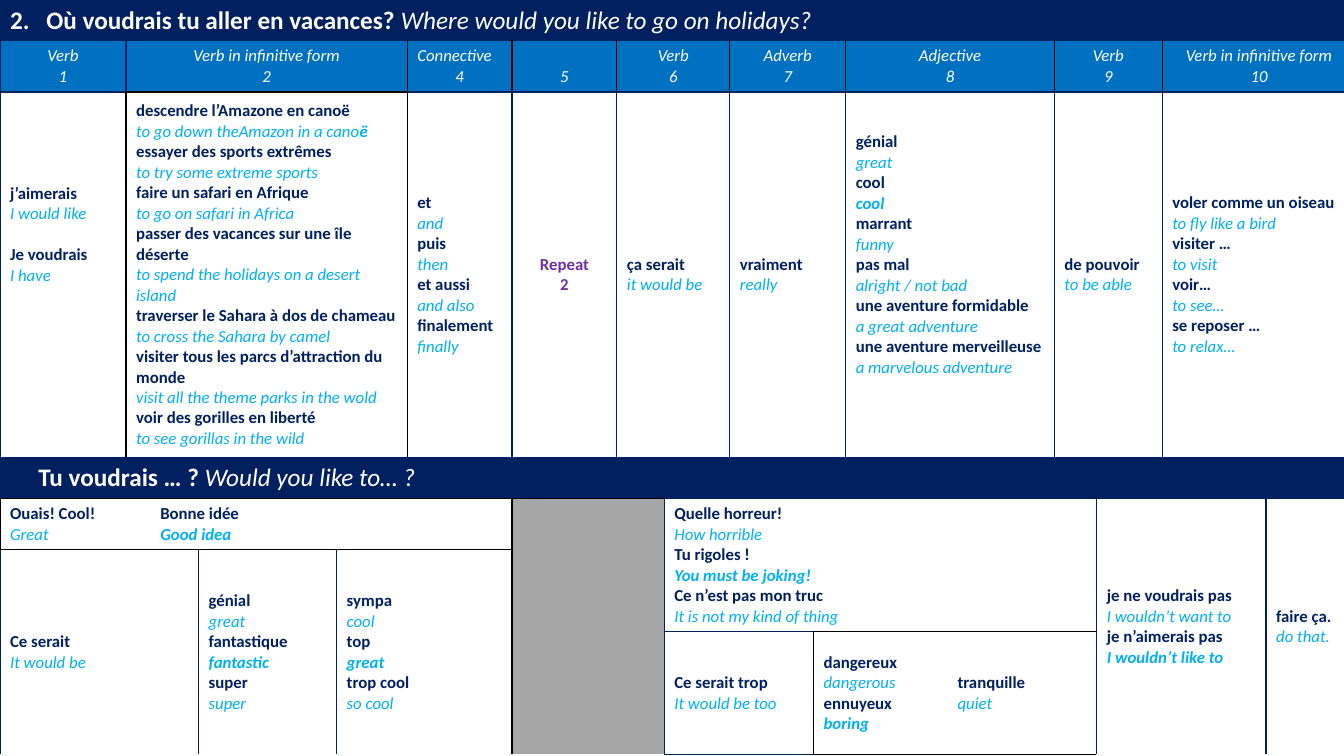
from typing import NamedTuple

from lxml import etree
from pptx import Presentation
from pptx import util as u
from pptx.dml.color import RGBColor
from pptx.enum import text as t
from pptx.oxml import ns

NAVY = RGBColor(0x00, 0x20, 0x60)
BLUE = RGBColor(0x00, 0x70, 0xC0)
SKY = RGBColor(0x00, 0xB0, 0xF0)
PLUM = RGBColor(0x70, 0x30, 0xA0)
GREY = RGBColor(0xA6, 0xA6, 0xA6)
WHITE = RGBColor(0xFF, 0xFF, 0xFF)
BLACK = RGBColor(0x00, 0x00, 0x00)

WIDTHS = [1.25, 0.13, 0.48, 1.37, 0.7, 1.04, 1.04, 0.47, 0.65,
          0.83, 0.32, 1.01, 1.06, 0.42, 0.65, 1.03, 0.89]
HEIGHTS = [0.39, 0.49, 3.63, 0.39, 0.49, 0.78, 1.22]
INKS = {"n": NAVY, "k": BLACK}
LEFT, MID = t.PP_ALIGN.LEFT, t.PP_ALIGN.CENTER


class Span(NamedTuple):
    text: str
    ink: RGBColor
    bold: bool = False
    slant: bool = False
    size: int = 12


class Line(NamedTuple):
    spans: list[Span]
    align: t.PP_ALIGN = LEFT


class Pair(NamedTuple):
    """A French phrase and its English gloss, which may end in bold."""
    french: str
    plain: str
    bold: str = ""


class Box(NamedTuple):
    """A table cell; edges gives left, right, top, bottom as n(avy), k (black) or -."""
    row: int
    col: int
    tall: int
    wide: int
    lines: list[Line]
    edges: str = "nnnn"
    fill: RGBColor = WHITE
    anchor: t.MSO_ANCHOR = t.MSO_ANCHOR.MIDDLE


def gloss(*pairs: Pair) -> list[Line]:
    lines = []
    for pair in pairs:
        lines.append(Line([Span(pair.french, NAVY, True)]))
        parts = [(pair.plain, False), (pair.bold, True)]
        lines.append(Line([Span(word, SKY, bold, True) for word, bold in parts if word]))
    return lines


def head(col: int, wide: int, name: str, number: int,
         edges: str = "kknn", align: t.PP_ALIGN = MID) -> Box:
    lines = [Line([Span(name, WHITE, slant=True)], align)] if name else []
    lines.append(Line([Span(str(number), WHITE, slant=True)], MID))
    return Box(1, col, 1, wide, lines, edges, BLUE, t.MSO_ANCHOR.BOTTOM)


def title(french: str, english: str) -> list[Line]:
    return [Line([Span(french, WHITE, True, size=18),
                  Span(english, WHITE, slant=True, size=18)])]


BOXES = [
    Box(0, 0, 1, 13, title("2.\tOù voudrais tu aller en vacances? ",
                           "Where would you like to go on holidays?"), fill=NAVY),
    Box(0, 13, 1, 2, [], fill=NAVY),
    Box(0, 15, 1, 2, [], fill=NAVY),
    head(0, 1, "Verb", 1, "nnnn"),
    head(1, 4, "Verb in infinitive form", 2, "nknk"),
    head(5, 1, "Connective", 4, align=LEFT),
    head(6, 1, "", 5),
    head(7, 2, "Verb", 6),
    head(9, 2, "Adverb", 7),
    head(11, 2, "Adjective", 8),
    head(13, 2, "Verb", 9),
    head(15, 2, "Verb in infinitive form", 10, "knnn"),
    Box(2, 0, 1, 1, gloss(Pair("j’aimerais", "I would like"),
                          Pair("Je voudrais", "I have")), "nknn"),
    Box(2, 1, 1, 4, gloss(
        Pair("descendre l’Amazone en canoë", "to go down theAmazon in a cano", "ë"),
        Pair("essayer des sports extrêmes", "to try some extreme sports"),
        Pair("faire un safari en Afrique", "to go on safari in Africa"),
        Pair("passer des vacances sur une île déserte",
             "to spend the holidays on a desert island"),
        Pair("traverser le Sahara à dos de chameau", "to cross the Sahara by camel"),
        Pair("visiter tous les parcs d’attraction du monde",
             "visit all the theme parks in the wold"),
        Pair("voir des gorilles en liberté", "to see gorillas in the wild")), "kkkk"),
    Box(2, 5, 1, 1, gloss(Pair("et", "and"), Pair("puis", "then"),
                          Pair("et aussi", "and also"),
                          Pair("finalement", "finally")), "knnn"),
    Box(2, 6, 1, 1, [Line([Span(word, PLUM, True)], MID) for word in ("Repeat", "2")]),
    Box(2, 7, 1, 2, gloss(Pair("ça serait", "it would be"))),
    Box(2, 9, 1, 2, gloss(Pair("vraiment", "really"))),
    Box(2, 11, 1, 2, gloss(
        Pair("génial", "great"), Pair("cool", "", "cool"), Pair("marrant", "funny"),
        Pair("pas mal", "alright / not bad"),
        Pair("une aventure formidable", "a great adventure"),
        Pair("une aventure merveilleuse", "a marvelous adventure"))),
    Box(2, 13, 1, 2, gloss(Pair("de pouvoir", "to be able"))),
    Box(2, 15, 1, 2, gloss(
        Pair("voler comme un oiseau", "to fly like a bird"), Pair("visiter …", "to visit"),
        Pair("voir…", "to see…"), Pair("se reposer …", "to relax…"))),
    Box(3, 0, 1, 17, title("Tu voudrais … ? ", "Would you like to… ?"), "nnnk", NAVY),
    Box(4, 0, 1, 2, gloss(Pair("Ouais! Cool!", "Great")), "k-kk"),
    Box(4, 2, 1, 4, gloss(Pair("Bonne idée", "", "Good idea")), "-kkk"),
    Box(4, 6, 3, 2, [], "knkn", GREY),
    Box(4, 8, 2, 6, gloss(
        Pair("Quelle horreur!", "How horrible"),
        Pair("Tu rigoles !", "", "You must be joking!"),
        Pair("Ce n’est pas mon truc", "It is not my kind of thing"))),
    Box(4, 14, 3, 2, gloss(Pair("je ne voudrais pas", "I wouldn’t want to"),
                           Pair("je n’aimerais pas", "", "I wouldn’t like to"))),
    Box(4, 16, 3, 1, gloss(Pair("faire ça.", "do that."))),
    Box(5, 0, 2, 3, gloss(Pair("Ce serait", "It would be")), "nnkn"),
    Box(5, 3, 2, 1, gloss(Pair("génial", "great"), Pair("fantastique", "", "fantastic"),
                          Pair("super", "super")), "nnkn"),
    Box(5, 4, 2, 2, gloss(Pair("sympa", "cool"), Pair("top", "", "great"),
                          Pair("trop cool", "so cool")), "nnkn"),
    Box(6, 8, 1, 2, gloss(Pair("Ce serait trop", "It would be too")), "nknn"),
    Box(6, 10, 1, 2, gloss(Pair("dangereux", "dangerous"),
                           Pair("ennuyeux", "", "boring")), "k-kk"),
    Box(6, 12, 1, 2, gloss(Pair("tranquille", "quiet")), "-kkk"),
]


def rule(cell, side: str, ink: RGBColor | None) -> etree._Element:
    """Append one border of a cell; no ink hides it."""
    edge = etree.SubElement(cell._tc.get_or_add_tcPr(), ns.qn(f"a:ln{side}"),
                            w=str(u.Pt(1)))
    if ink is None:
        etree.SubElement(edge, ns.qn("a:noFill"))
    else:
        solid = etree.SubElement(edge, ns.qn("a:solidFill"))
        etree.SubElement(solid, ns.qn("a:srgbClr"), val=str(ink))
    return edge


def write(frame, lines: list[Line]) -> None:
    frame.text = "\n" * (len(lines) - 1)
    for para, line in zip(frame.paragraphs, lines):
        para.alignment = line.align
        for span in line.spans:
            run = para.add_run()
            run.text = span.text
            font = run.font
            font.name, font.size = "Calibri", u.Pt(span.size)
            font.bold, font.italic = span.bold, span.slant
            font.color.rgb = span.ink


def draw(table, box: Box) -> None:
    down, right = box.row + box.tall - 1, box.col + box.wide - 1
    first = table.cell(box.row, box.col)
    if box.tall * box.wide > 1:
        first.merge(table.cell(down, right))
    for row in range(box.row, down + 1):
        for col in range(box.col, right + 1):
            cell = table.cell(row, col)
            outer = (col == box.col, col == right, row == box.row, row == down)
            for side, code, shown in zip("LRTB", box.edges, outer):
                if shown:
                    rule(cell, side, INKS.get(code))
            cell.fill.solid()
            cell.fill.fore_color.rgb = box.fill
    first.vertical_anchor = box.anchor
    if box.lines:
        write(first.text_frame, box.lines)


def main() -> None:
    deck = Presentation()
    deck.slide_width, deck.slide_height = u.Inches(13.33), u.Inches(7.5)
    slide = deck.slides.add_slide(deck.slide_layouts[6])
    table = slide.shapes.add_table(len(HEIGHTS), len(WIDTHS), 0, 0,
                                   u.Inches(13.33), u.Inches(7.52)).table
    table.first_row = table.horz_banding = False
    for column, width in zip(table.columns, WIDTHS):
        column.width = u.Inches(width)
    for row, height in zip(table.rows, HEIGHTS):
        row.height = u.Inches(height)
    for box in BOXES:
        draw(table, box)

    props = table.cell(0, 0).text_frame.paragraphs[0]._p.get_or_add_pPr()
    tabs = etree.SubElement(props, ns.qn("a:tabLst"))
    etree.SubElement(tabs, ns.qn("a:tab"), pos=str(u.Inches(0.36)), algn="l")
    table.cell(3, 0).margin_left = u.Inches(0.38)
    wish = table.cell(2, 0)
    wish.text_frame.paragraphs[2].space_before = u.Pt(14.6)
    wish.margin_bottom = u.Inches(0.85)
    table.cell(2, 11).margin_bottom = u.Inches(0.45)
    deck.save("out.pptx")


if __name__ == "__main__":
    main()
